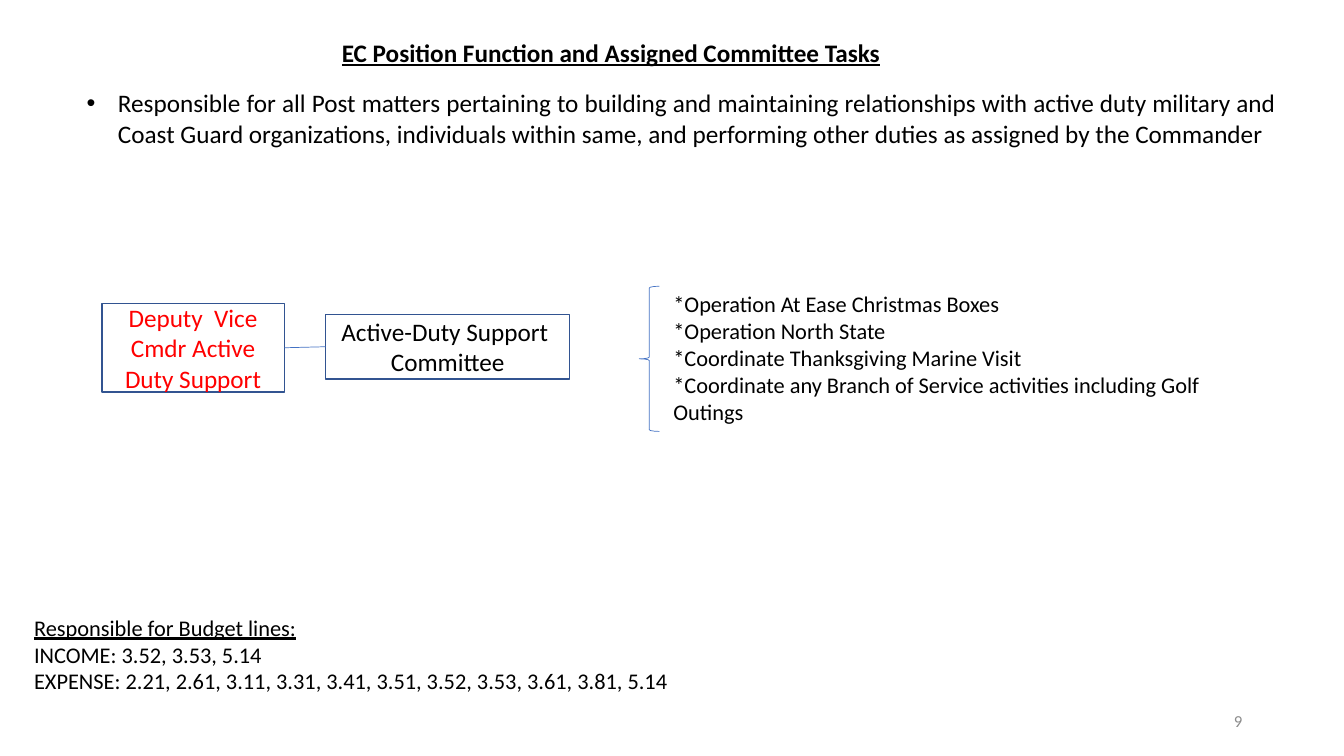
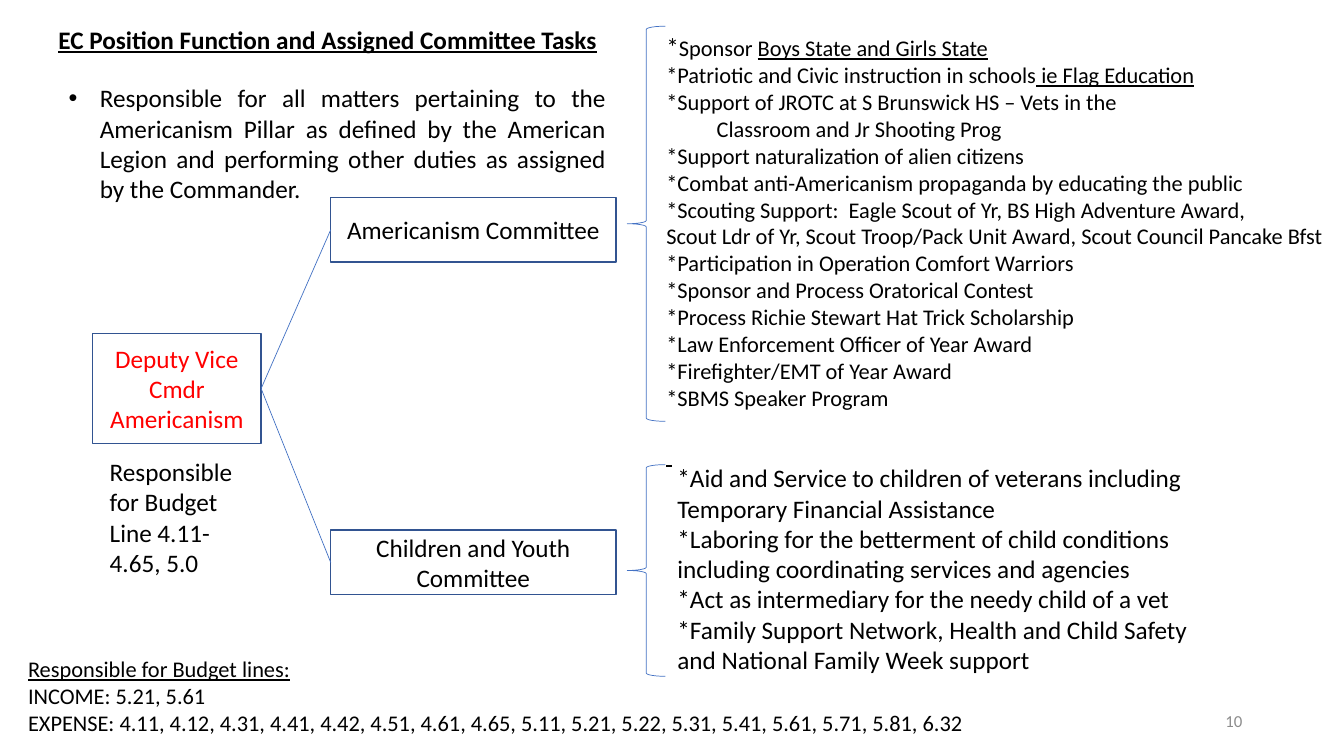
from collections import namedtuple
from dataclasses import dataclass

from lxml import etree
from pptx import Presentation
from pptx.dml.color import RGBColor
from pptx.enum.shapes import MSO_CONNECTOR, MSO_SHAPE
from pptx.enum.text import MSO_ANCHOR, MSO_AUTO_SIZE, PP_ALIGN
from pptx.oxml.ns import qn
from pptx.util import Inches, Pt

LEFT, CENTER, RIGHT, JUSTIFY = (
    PP_ALIGN.LEFT, PP_ALIGN.CENTER, PP_ALIGN.RIGHT, PP_ALIGN.JUSTIFY)
TOP, MIDDLE = MSO_ANCHOR.TOP, MSO_ANCHOR.MIDDLE
NO_FIT = MSO_AUTO_SIZE.NONE
RECTANGLE, LEFT_BRACE = MSO_SHAPE.RECTANGLE, MSO_SHAPE.LEFT_BRACE
STRAIGHT = MSO_CONNECTOR.STRAIGHT
LEFT_SIDE, RIGHT_SIDE = 1, 3

Box = namedtuple("Box", "left top width height")
Span = namedtuple("Span", "text size underline")


@dataclass(frozen=True)
class Theme:
    font: str = "Calibri"
    text: RGBColor = RGBColor(0x00, 0x00, 0x00)
    officer: RGBColor = RGBColor(0xFF, 0x00, 0x00)
    border: RGBColor = RGBColor(0x32, 0x54, 0x91)
    link: RGBColor = RGBColor(0x44, 0x72, 0xC4)
    number: RGBColor = RGBColor(0x8C, 0x8C, 0x8C)
    main_size: int = 18
    list_size: int = 16
    number_size: int = 12
    border_width: float = 1
    link_width: float = 0.5


THEME = Theme()
TITLE = "EC Position Function and Assigned Committee Tasks"
NUMBER_BOX = Box(9.42, 6.95, 3, 0.4)


# Shared helpers
def inches(box):
    return [Inches(length) for length in box]


def move(shape, box):
    shape.left, shape.top, shape.width, shape.height = inches(box)


def style_para(para, size, color=THEME.text, align=LEFT):
    para.alignment = align
    para.font.name = THEME.font
    para.font.size = Pt(size)
    para.font.color.rgb = color


def set_indent(para, margin, first_line=0):
    properties = para._p.get_or_add_pPr()
    properties.set("marL", str(Inches(margin)))
    properties.set("indent", str(Inches(first_line)))
    return properties


def write_lines(frame, lines, size, color=THEME.text, align=LEFT):
    """Each line is a string or a list of spans."""
    frame.word_wrap = True
    for index, line in enumerate(lines):
        para = frame.paragraphs[0] if index == 0 else frame.add_paragraph()
        style_para(para, size, color, align)
        if isinstance(line, str):
            para.text = line
            continue
        for span in line:
            run = para.add_run()
            run.text = span.text
            run.font.size = Pt(span.size)
            run.font.underline = span.underline


def add_text(page, box, lines, size, color=THEME.text, align=LEFT):
    frame = page.shapes.add_textbox(*inches(box)).text_frame
    write_lines(frame, lines, size, color, align)
    return frame


# Parts of every page
def start_page(deck, number, title_box, duty_box, duty):
    page = deck.slides.add_slide(deck.slide_layouts[1])
    title, body = page.placeholders[0], page.placeholders[1]

    # Title
    move(title, title_box)
    frame = title.text_frame
    frame.text = TITLE
    frame.word_wrap, frame.auto_size = False, NO_FIT
    frame.vertical_anchor = TOP
    heading = frame.paragraphs[0]
    style_para(heading, THEME.main_size)
    heading.font.bold = heading.font.underline = True

    # Duty statement
    move(body, duty_box)
    frame = body.text_frame
    frame.text = duty
    frame.auto_size = NO_FIT
    para = frame.paragraphs[0]
    style_para(para, THEME.main_size, align=JUSTIFY)
    para.space_before = Pt(0)
    properties = set_indent(para, 0.31, -0.31)
    etree.SubElement(properties, qn("a:buFont")).set("typeface", "Arial")
    etree.SubElement(properties, qn("a:buChar")).set("char", "•")

    # Page number
    frame = add_text(page, NUMBER_BOX, [str(number)], THEME.number_size,
                     THEME.number, RIGHT)
    frame.vertical_anchor = MIDDLE
    return page


def add_role(page, box, lines, color=THEME.text):
    role = page.shapes.add_shape(RECTANGLE, *inches(box))
    role.shadow.inherit = False
    role.fill.background()
    role.line.color.rgb = THEME.border
    role.line.width = Pt(THEME.border_width)
    role.text_frame.vertical_anchor = MIDDLE
    write_lines(role.text_frame, lines, THEME.main_size, color, CENTER)
    return role


def link_roles(page, officer, committee):
    link = page.shapes.add_connector(STRAIGHT, 0, 0, 0, 0)
    link.begin_connect(officer, RIGHT_SIDE)
    link.end_connect(committee, LEFT_SIDE)
    link.line.color.rgb = THEME.link
    link.line.width = Pt(THEME.link_width)
    etree.SubElement(link._element.spPr, qn("a:effectLst"))


def add_tasks(page, brace_box, text_box, tasks, size):
    brace = page.shapes.add_shape(LEFT_BRACE, *inches(brace_box))
    brace.shadow.inherit = False
    brace.fill.background()
    brace.line.color.rgb = THEME.link
    brace.line.width = Pt(THEME.link_width)
    return add_text(page, text_box, tasks, size)


def add_budget(page, box, income, expense):
    frame = add_text(page, box, [
        "Responsible for Budget lines:",
        f"INCOME: {income}",
        f"EXPENSE: {expense}",
    ], THEME.list_size)
    frame.paragraphs[0].font.underline = True


# Pages
def build_active_duty(deck):
    page = start_page(
        deck, 9, Box(3.29, 0.32, 5.59, 0.4), Box(0.76, 0.82, 12, 0.71),
        "Responsible for all Post matters pertaining to building and "
        "maintaining relationships with active duty military and Coast Guard "
        "organizations, individuals within same, and performing other duties "
        "as assigned by the Commander")
    officer = add_role(page, Box(1.01, 3.01, 1.81, 0.88),
                       ["Deputy  Vice Cmdr Active Duty Support"],
                       THEME.officer)
    committee = add_role(page, Box(3.23, 3.12, 2.42, 0.64),
                         ["Active-Duty Support ", "Committee"])
    link_roles(page, officer, committee)
    add_tasks(page, Box(6.34, 2.84, 0.2, 1.44), Box(6.58, 2.83, 5.75, 1.45), [
        "*Operation At Ease Christmas Boxes",
        "*Operation North State",
        "*Coordinate Thanksgiving Marine Visit",
        "*Coordinate any Branch of Service activities including Golf Outings",
    ], THEME.list_size)
    add_budget(page, Box(0.24, 6.04, 7.36, 0.91), "3.52, 3.53, 5.14",
               "2.21, 2.61, 3.11, 3.31, 3.41, 3.51, 3.52, 3.53, 3.61, 3.81, "
               "5.14")


def build_americanism(deck):
    page = start_page(
        deck, 10, Box(0.48, 0.19, 5.59, 0.4), Box(0.58, 0.77, 5.53, 1.31),
        "Responsible for all matters pertaining to the Americanism Pillar as "
        "defined by the American Legion and performing other duties as "
        "assigned by the Commander.")

    # Officer and committees
    officer = add_role(page, Box(0.92, 3.31, 1.67, 1.09),
                       ["Deputy Vice Cmdr Americanism"], THEME.officer)
    for top, name in ((1.96, "Americanism Committee"),
                      (5.26, "Children and Youth Committee")):
        committee = add_role(page, Box(3.28, top, 2.83, 0.64), [name])
        link_roles(page, officer, committee)
    add_text(page, Box(0.99, 4.48, 1.67, 1.31),
             ["Responsible for Budget Line 4.11-4.65, 5.0"], THEME.main_size)

    # Americanism tasks
    main, small = THEME.main_size, THEME.list_size
    frame = add_tasks(
        page, Box(6.22, 0.26, 0.38, 3.92), Box(6.51, 0.26, 7.28, 4.48), [
            [Span("*", main, False), Span("Sponsor ", small, False),
             Span("Boys State and Girls State", small, True)],
            [Span("*Patriotic and Civic instruction in schools", small, False),
             Span(" ie Flag Education", small, True)],
            "*Support of JROTC at S Brunswick HS – Vets in the",
            "Classroom and Jr Shooting Prog",
            "*Support naturalization of alien citizens",
            "*Combat anti-Americanism propaganda by educating the public",
            "*Scouting Support:  Eagle Scout of Yr, BS High Adventure Award,",
            "Scout Ldr of Yr, Scout Troop/Pack Unit Award, "
            "Scout Council Pancake Bfst",
            "*Participation in Operation Comfort Warriors",
            "*Sponsor and Process Oratorical Contest",
            "*Process Richie Stewart Hat Trick Scholarship",
            "*Law Enforcement Officer of Year Award",
            "*Firefighter/EMT of Year Award",
            "*SBMS Speaker Program",
            [Span(" ", main, True)],
        ], small)
    set_indent(frame.paragraphs[3], 0.5)
    frame.paragraphs[-1].space_before = Pt(19.5)

    # Children and youth tasks
    add_tasks(page, Box(6.22, 4.61, 0.38, 2.1), Box(6.62, 4.54, 5.39, 2.22), [
        "*Aid and Service to children of veterans including Temporary "
        "Financial Assistance",
        "*Laboring for the betterment of child conditions including "
        "coordinating services and agencies",
        "*Act as intermediary for the needy child of a vet",
        "*Family Support Network, Health and Child Safety and National "
        "Family Week support",
    ], main)
    add_budget(page, Box(0.18, 6.45, 10.2, 0.91), "5.21, 5.61",
               "4.11, 4.12, 4.31, 4.41, 4.42, 4.51, 4.61, 4.65, 5.11, 5.21, "
               "5.22, 5.31, 5.41, 5.61, 5.71, 5.81, 6.32")


def main():
    deck = Presentation()
    deck.slide_width, deck.slide_height = Inches(13.33), Inches(7.5)
    build_active_duty(deck)
    build_americanism(deck)
    deck.save("out.pptx")


if __name__ == "__main__":
    main()
